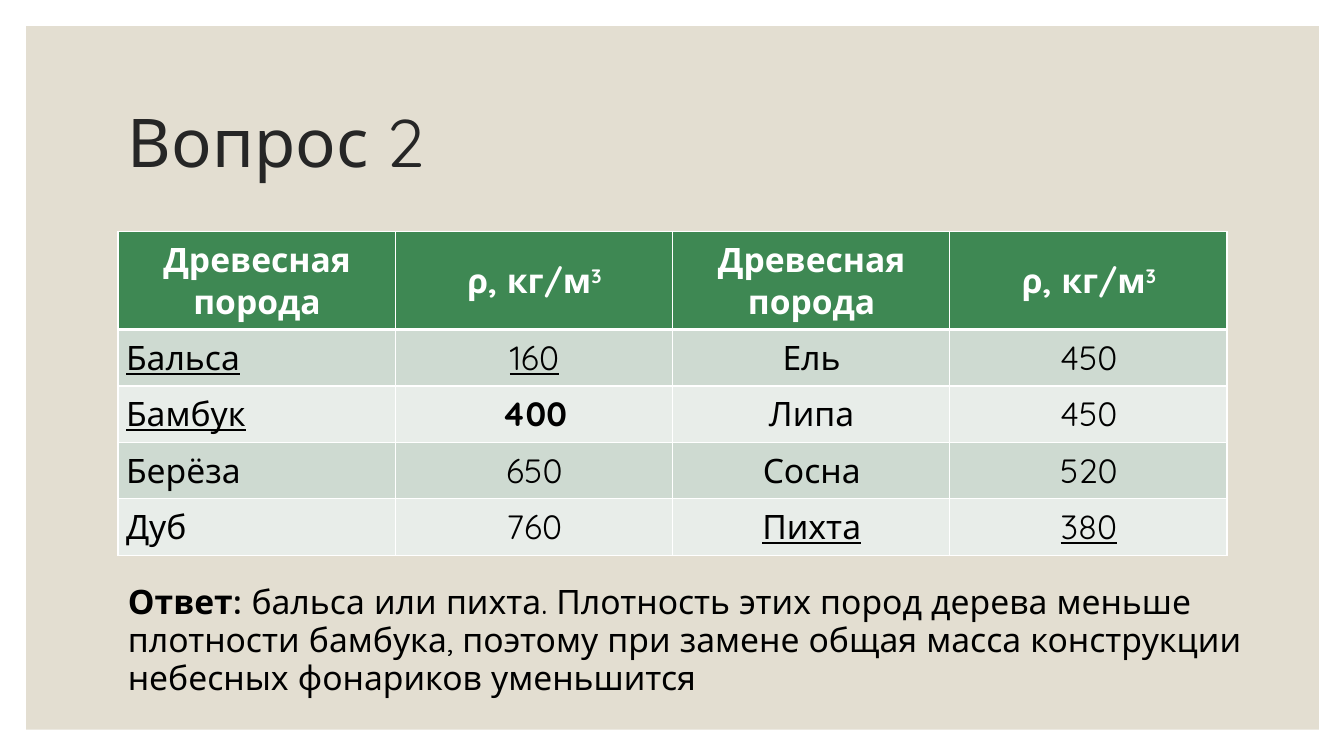
from dataclasses import dataclass

import pptx
import pptx.dml.color
import pptx.enum.text
import pptx.oxml.ns
import pptx.util
from lxml import etree

Inches = pptx.util.Inches
Pt = pptx.util.Pt
Align = pptx.enum.text.PP_ALIGN
Anchor = pptx.enum.text.MSO_ANCHOR

FONT = "Quicksand"
WHITE, BLACK = "FFFFFF", "000000"
BACKDROP, TITLE_COLOR = "E3DED1", "262626"
HEADER_FILL = "3E8853"
BAND_FILLS = ("CEDAD1", "E8EDE9")
LEFT, TABLE_WIDTH = 1.17, 11
HEADER_HEIGHT, ROW_HEIGHT = 0.97, 0.56


@dataclass
class Entry:
    text: str
    bold: bool = False
    underline: bool = False
    superscript: str = ""


HEADER = [
    Entry("Древесная порода", bold=True),
    Entry("ρ, кг/м", bold=True, superscript="3"),
] * 2
WOODS = [
    [Entry("Бальса", underline=True), Entry("160", underline=True), Entry("Ель"), Entry("450")],
    [Entry("Бамбук", underline=True), Entry("400", bold=True), Entry("Липа"), Entry("450")],
    [Entry("Берёза"), Entry("650"), Entry("Сосна"), Entry("520")],
    [Entry("Дуб"), Entry("760"), Entry("Пихта", underline=True), Entry("380", underline=True)],
]


def rgb(value: str) -> pptx.dml.color.RGBColor:
    return pptx.dml.color.RGBColor.from_string(value)


def set_font(paragraph, size: float, color: str) -> None:
    paragraph.font.name = FONT
    paragraph.font.size = Pt(size)
    paragraph.font.color.rgb = rgb(color)


def add_text(slide, left: float, top: float, width: float, height: float, anchor):
    """Add a wrapping text box and return its first paragraph."""
    frame = slide.shapes.add_textbox(
        Inches(left), Inches(top), Inches(width), Inches(height)
    ).text_frame
    frame.word_wrap = True
    frame.vertical_anchor = anchor
    return frame.paragraphs[0]


def set_borders(cell, widths: dict[str, float]) -> None:
    """Draw white cell edges; widths maps L, R, T and B to points."""
    properties = cell._tc.get_or_add_tcPr()
    for index, (side, width) in enumerate(widths.items()):
        line = etree.Element(pptx.oxml.ns.qn(f"a:ln{side}"), w=str(Pt(width)))
        fill = etree.SubElement(line, pptx.oxml.ns.qn("a:solidFill"))
        etree.SubElement(fill, pptx.oxml.ns.qn("a:srgbClr"), val=WHITE)
        properties.insert(index, line)


def fill_cell(cell, entry: Entry, row: int, column: int) -> None:
    is_header = row == 0
    cell.fill.solid()
    cell.fill.fore_color.rgb = rgb(HEADER_FILL if is_header else BAND_FILLS[(row - 1) % 2])
    cell.margin_left = Inches(0.08)
    cell.margin_right = cell.margin_top = cell.margin_bottom = Inches(0.07)
    cell.vertical_anchor = Anchor.MIDDLE
    paragraph = cell.text_frame.paragraphs[0]
    paragraph.alignment = Align.CENTER if is_header or column else Align.LEFT
    set_font(paragraph, 24, WHITE if is_header else BLACK)
    paragraph.font.bold = entry.bold
    paragraph.font.underline = entry.underline
    paragraph.add_run().text = entry.text
    if entry.superscript:
        exponent = paragraph.add_run()
        exponent.text = entry.superscript
        exponent._r.get_or_add_rPr().set("baseline", "30000")
    set_borders(cell, {"L": 1, "R": 1, "T": 3 if row == 1 else 1, "B": 3 if is_header else 1})


def add_density_table(slide) -> None:
    rows = [HEADER, *WOODS]
    height = HEADER_HEIGHT + ROW_HEIGHT * len(WOODS)
    table = slide.shapes.add_table(
        len(rows), len(HEADER), Inches(LEFT), Inches(2.3), Inches(TABLE_WIDTH), Inches(height)
    ).table
    for row, entries in enumerate(rows):
        table.rows[row].height = Inches(ROW_HEIGHT if row else HEADER_HEIGHT)
        for column, entry in enumerate(entries):
            fill_cell(table.cell(row, column), entry, row, column)


def main() -> None:
    presentation = pptx.Presentation()
    presentation.slide_width = Inches(13.33)
    presentation.slide_height = Inches(7.5)
    slide = presentation.slides.add_slide(presentation.slide_layouts[6])

    backdrop = slide.shapes.add_shape(
        pptx.enum.shapes.MSO_SHAPE.RECTANGLE,
        Inches(0.26), Inches(0.26), Inches(12.82), Inches(6.98),
    )
    backdrop.shadow.inherit = False
    backdrop.fill.solid()
    backdrop.fill.fore_color.rgb = rgb(BACKDROP)
    backdrop.line.fill.background()

    title = add_text(slide, LEFT, 0.7, TABLE_WIDTH, 1.5, Anchor.MIDDLE)
    set_font(title, 48, TITLE_COLOR)
    title.line_spacing = 0.9
    title.add_run().text = "Вопрос 2"

    add_density_table(slide)

    answer = add_text(slide, LEFT, 5.74, 11.89, 1.42, Anchor.TOP)
    set_font(answer, 24, BLACK)
    answer.line_spacing = 0.95
    label = answer.add_run()
    label.text = "Ответ: "
    label.font.bold = True
    answer.add_run().text = (
        "бальса или пихта. Плотность этих пород дерева меньше плотности бамбука, "
        "поэтому при замене общая масса конструкции небесных фонариков уменьшится"
    )

    presentation.save("out.pptx")


if __name__ == "__main__":
    main()
